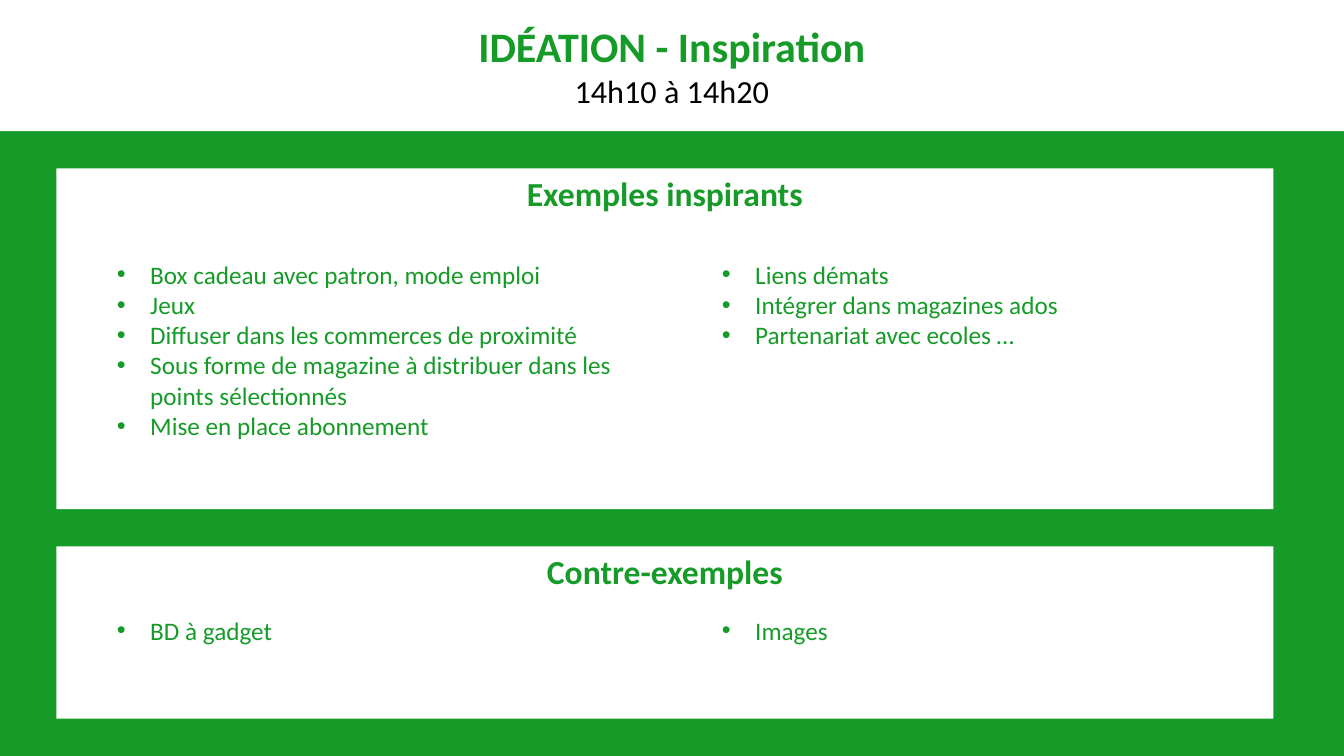
from dataclasses import dataclass

from lxml import etree
from pptx import Presentation
from pptx.dml.color import RGBColor
from pptx.enum.shapes import MSO_SHAPE
from pptx.enum.text import MSO_ANCHOR, MSO_AUTO_SIZE, PP_ALIGN
from pptx.oxml.ns import qn
from pptx.util import Inches, Pt


@dataclass(frozen=True)
class Theme:
    green: RGBColor = RGBColor(0x16, 0x9B, 0x28)
    white: RGBColor = RGBColor(0xFF, 0xFF, 0xFF)
    black: RGBColor = RGBColor(0, 0, 0)
    font: str = "Calibri"
    title: Pt = Pt(30)
    time: Pt = Pt(23)
    heading: Pt = Pt(24)
    item: Pt = Pt(18)


THEME = Theme()
COMPARISON_LAYOUT = 4
PANEL_LEFT, PANEL_WIDTH = 0.56, 12.07
COLUMN_LEFTS, COLUMN_WIDTH = (0.94, 6.94), 5.37

# heading, panel top, panel height, list top, list height, columns
SECTIONS = [
    ("Exemples inspirants", 1.67, 3.38, 2.52, 2.53, [
        ["Box cadeau avec patron, mode emploi",
         "Jeux",
         "Diffuser dans les commerces de proximité",
         "Sous forme de magazine à distribuer dans les points sélectionnés",
         "Mise en place abonnement"],
        ["Liens démats",
         "Intégrer dans magazines ados",
         "Partenariat avec ecoles …"],
    ]),
    ("Contre-exemples", 5.42, 1.71, 6.05, 1.09, [["BD à gadget"], ["Images"]]),
]


def place(shape, left, top, width, height):
    shape.left, shape.top = Inches(left), Inches(top)
    shape.width, shape.height = Inches(width), Inches(height)


def fill_background(fill, color):
    fill.solid()
    fill.fore_color.rgb = color


def write(paragraph, text, size, color, bold=False, align=PP_ALIGN.CENTER):
    paragraph.text = text
    paragraph.alignment = align
    for run in paragraph.runs:
        run.font.name = THEME.font
        run.font.size = size
        run.font.bold = bold
        run.font.color.rgb = color


def add_bullet(paragraph):
    properties = paragraph._p.get_or_add_pPr()
    properties.set("marL", str(Inches(0.45)))
    properties.set("indent", str(Inches(-0.33)))
    bullet_color = etree.SubElement(properties, qn("a:buClr"))
    etree.SubElement(bullet_color, qn("a:srgbClr"), val=str(THEME.green))
    etree.SubElement(properties, qn("a:buFont"), typeface="Arial")
    etree.SubElement(properties, qn("a:buChar"), char="•")


def set_banner(banner, title, time):
    place(banner, 0, -0.01, 13.33, 1.31)
    fill_background(banner.fill, THEME.white)
    frame = banner.text_frame
    frame.auto_size = MSO_AUTO_SIZE.NONE
    frame.vertical_anchor = MSO_ANCHOR.MIDDLE
    write(frame.paragraphs[0], title, THEME.title, THEME.green, bold=True)
    write(frame.add_paragraph(), time, THEME.time, THEME.black)


def add_panel(slide, heading, top, height):
    """Add a white panel behind the lists, with its heading at the top."""
    panel = slide.shapes.add_shape(
        MSO_SHAPE.RECTANGLE, Inches(PANEL_LEFT), Inches(top),
        Inches(PANEL_WIDTH), Inches(height))
    panel.shadow.inherit = False
    fill_background(panel.fill, THEME.white)
    panel.line.fill.background()
    frame = panel.text_frame
    frame.word_wrap = True
    frame.vertical_anchor = MSO_ANCHOR.TOP
    write(frame.paragraphs[0], heading, THEME.heading, THEME.green, bold=True)
    frame.paragraphs[0].space_before = Pt(10)
    panel.element.getparent().insert(2, panel.element)


def set_list(body, items, left, top, height):
    place(body, left, top, COLUMN_WIDTH, height)
    frame = body.text_frame
    frame.auto_size = MSO_AUTO_SIZE.NONE
    frame.vertical_anchor = MSO_ANCHOR.TOP
    frame.text = "\n".join(items)
    for paragraph, item in zip(frame.paragraphs, items):
        write(paragraph, item, THEME.item, THEME.green, align=PP_ALIGN.LEFT)
        paragraph.space_before = Pt(0)
        add_bullet(paragraph)


def main():
    presentation = Presentation()
    presentation.slide_width = Inches(13.33)
    presentation.slide_height = Inches(7.5)
    layout = presentation.slide_layouts[COMPARISON_LAYOUT]
    slide = presentation.slides.add_slide(layout)
    fill_background(slide.background.fill, THEME.green)

    banner, *bodies = slide.placeholders
    set_banner(banner, "IDÉATION - Inspiration", "14h10 à 14h20")
    remaining_bodies = iter(bodies)
    for heading, top, height, list_top, list_height, columns in SECTIONS:
        add_panel(slide, heading, top, height)
        for left, items in zip(COLUMN_LEFTS, columns):
            set_list(next(remaining_bodies), items, left, list_top, list_height)

    presentation.save("out.pptx")


if __name__ == "__main__":
    main()
